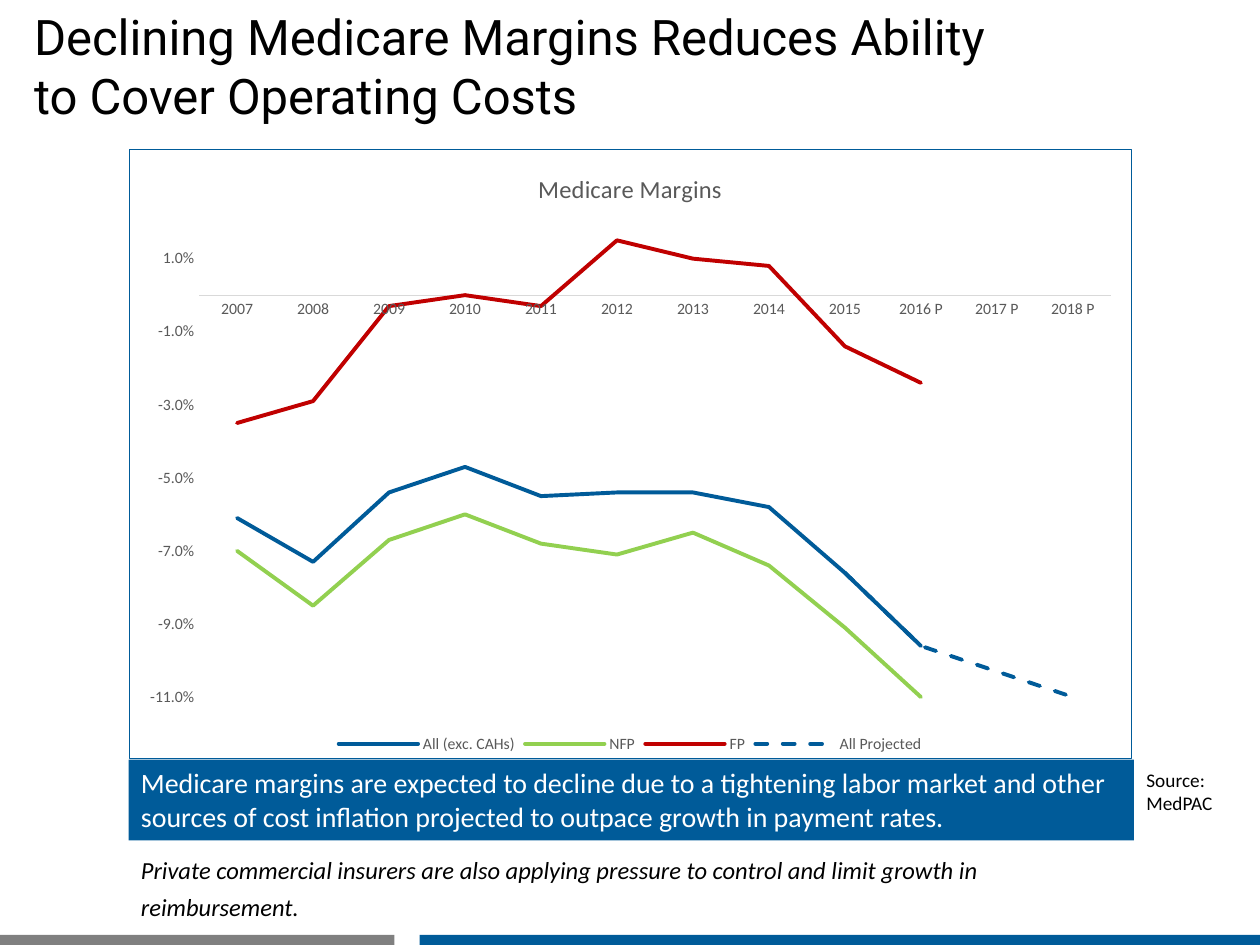
"""Build the slide on declining Medicare margins."""
from lxml import etree
from pptx import Presentation
from pptx.chart.data import CategoryChartData
from pptx.dml.color import RGBColor
from pptx.enum.chart import XL_CHART_TYPE, XL_LEGEND_POSITION, XL_TICK_MARK
from pptx.enum.dml import MSO_LINE
from pptx.enum.shapes import MSO_SHAPE
from pptx.enum.text import MSO_ANCHOR, MSO_AUTO_SIZE, PP_ALIGN
from pptx.oxml import parse_xml
from pptx.oxml.ns import nsdecls, qn
from pptx.util import Inches, Pt

COLORS = {"blue": "005B99", "gray": "808080", "green": "92D050", "red": "C00000",
          "label": "595959", "axis": "D9D9D9", "black": "000000", "white": "FFFFFF"}


def style_font(font, size, color, name="Calibri"):
    font.name = name
    font.size = Pt(size)
    font.color.rgb = RGBColor.from_string(COLORS[color])


def add_bar(left, top, width, height, color):
    bar = page.shapes.add_shape(MSO_SHAPE.RECTANGLE, Inches(left), Inches(top),
                                Inches(width), Inches(height))
    bar.shadow.inherit = False
    bar.fill.solid()
    bar.fill.fore_color.rgb = RGBColor.from_string(COLORS[color])
    bar.line.fill.background()
    return bar


deck = Presentation()
deck.slide_width, deck.slide_height = Inches(10), Inches(7.5)
page = deck.slides.add_slide(deck.slide_layouts.get_by_name("Title Only"))

title = page.shapes.title
title.left, title.top = Inches(0.17), Inches(0.27)
title.width, title.height = Inches(7.98), Inches(0.5)
title.text_frame.text = "Declining Medicare Margins Reduces Ability to Cover Operating Costs"
title.text_frame.auto_size = MSO_AUTO_SIZE.NONE
title.text_frame.vertical_anchor = MSO_ANCHOR.MIDDLE
para = title.text_frame.paragraphs[0]
para.alignment = PP_ALIGN.LEFT
style_font(para.runs[0].font, 28, "black", "Roboto")

add_bar(3.33, 7.42, 6.67, 0.08, "blue")
add_bar(0, 7.42, 3.13, 0.08, "gray")

margins = [
    ("All (exc. CAHs)", "blue", [-0.061, -0.073, -0.054, -0.047, -0.055, -0.054,
                                 -0.054, -0.058, -0.076, -0.096]),
    ("NFP", "green", [-0.07, -0.085, -0.067, -0.06, -0.068, -0.071,
                      -0.065, -0.074, -0.091, -0.11]),
    ("FP", "red", [-0.035, -0.029, -0.003, 0, -0.003, 0.015,
                   0.01, 0.008, -0.014, -0.024]),
    ("All Projected", "blue", [None] * 8 + [-0.076, -0.096, -0.103, -0.11]),
]
data = CategoryChartData(number_format="0.0%")
data.categories = [str(year) for year in range(2007, 2016)] + ["2016 P", "2017 P", "2018 P"]
for name, color, values in margins:
    data.add_series(name, values + [None] * (12 - len(values)))
chart = page.shapes.add_chart(XL_CHART_TYPE.LINE, Inches(1.02), Inches(1.18),
                              Inches(7.96), Inches(4.84), data).chart
style_font(chart.font, 10, "black")
chart.has_title = True
chart.chart_title.include_in_layout = False
chart.chart_title.text_frame.text = "Medicare Margins"
heading = chart.chart_title.text_frame.paragraphs[0].runs[0].font
style_font(heading, 14, "label")
heading.bold = False
chart.has_legend = True
chart.legend.position = XL_LEGEND_POSITION.BOTTOM
chart.legend.include_in_layout = False
style_font(chart.legend.font, 9, "label")

for axis in (chart.category_axis, chart.value_axis):
    axis.has_major_gridlines = False
    axis.major_tick_mark = axis.minor_tick_mark = XL_TICK_MARK.NONE
    style_font(axis.tick_labels.font, 9, "label")
axis_line = chart.category_axis.format.line
axis_line.color.rgb = RGBColor.from_string(COLORS["axis"])
axis_line.width = Pt(0.75)
scale = chart.value_axis
scale.format.line.fill.background()
scale.minimum_scale, scale.maximum_scale, scale.major_unit = -0.11, 0.02, 0.02
scale.tick_labels.number_format = "0.0%"
scale.tick_labels.number_format_is_linked = False

chart.plots[0].vary_by_categories = False
for series, (name, color, values) in zip(chart.plots[0].series, margins):
    series.smooth = False
    series.format.line.color.rgb = RGBColor.from_string(COLORS[color])
    series.format.line.width = Pt(2.25)
    if name == "All Projected":
        series.format.line.dash_style = MSO_LINE.DASH
    series._element.find(".//" + qn("a:ln")).set("cap", "rnd")

chart_space = chart._chartSpace
plot_area = chart_space.find(".//" + qn("c:plotArea"))
for layout in plot_area.findall(qn("c:layout")):
    plot_area.remove(layout)
layout = parse_xml(f"<c:layout {nsdecls('c')}><c:manualLayout/></c:layout>")
for tag, value in (("layoutTarget", "inner"), ("xMode", "edge"), ("yMode", "edge"),
                   ("x", "0.07"), ("y", "0.12"), ("w", "0.91"), ("h", "0.78")):
    etree.SubElement(layout[0], qn(f"c:{tag}")).set("val", value)
plot_area.insert(0, layout)
chart_space.find(qn("c:chart")).addnext(parse_xml(
    f'<c:spPr {nsdecls("c", "a")}><a:noFill/><a:ln w="6350"><a:solidFill>'
    f'<a:srgbClr val="{COLORS["blue"]}"/></a:solidFill></a:ln></c:spPr>'))

banner = add_bar(1.02, 6.03, 7.98, 0.64, "blue")
source = page.shapes.add_textbox(Inches(9), Inches(6.05), Inches(0.92), Inches(0.47))
remark = page.shapes.add_textbox(Inches(1.02), Inches(6.74), Inches(7.8), Inches(0.64))
for box, text, size, color in (
    (banner, "Medicare margins are expected to decline due to a tightening labor market and "
     "other sources of cost inflation projected to outpace growth in payment rates.", 16, "white"),
    (source, "Source: MedPAC", 11, "black"),
    (remark, "Private commercial insurers are also applying pressure to control and limit "
     "growth in reimbursement.", 14, "black"),
):
    frame = box.text_frame
    frame.text = text
    frame.word_wrap = True
    frame.auto_size = MSO_AUTO_SIZE.SHAPE_TO_FIT_TEXT
    frame.vertical_anchor = MSO_ANCHOR.TOP
    frame.paragraphs[0].alignment = PP_ALIGN.LEFT
    style_font(frame.paragraphs[0].runs[0].font, size, color)
remark_para = remark.text_frame.paragraphs[0]
remark_para.runs[0].font.italic = True
span = remark_para.add_run()
span.text = " "
style_font(span.font, 18, "black")

deck.save("out.pptx")
